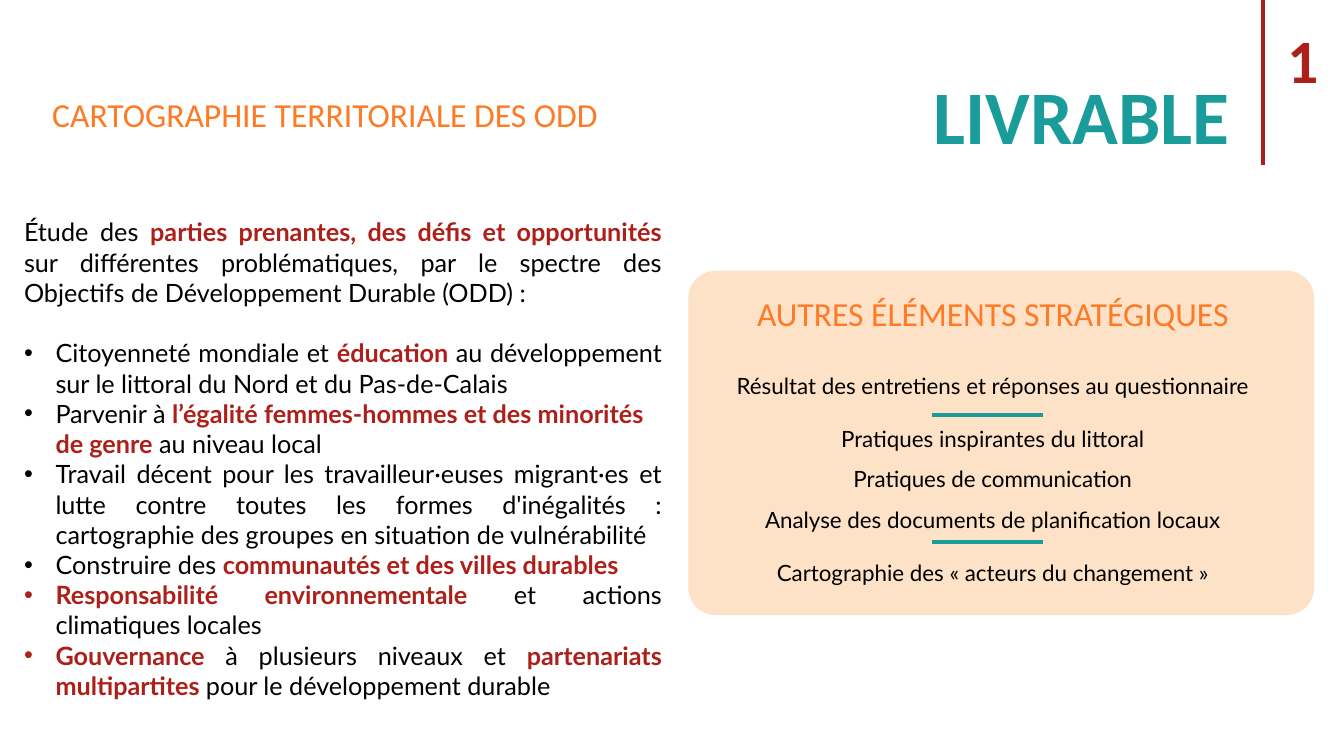
"""Build the LIVRABLE slide on the territorial mapping of the SDGs."""
from dataclasses import dataclass

from lxml.etree import SubElement
from pptx import Presentation
from pptx.dml.color import RGBColor
from pptx.enum.shapes import MSO_CONNECTOR, MSO_SHAPE
from pptx.enum.text import PP_ALIGN
from pptx.oxml.ns import qn
from pptx.shapes.shapetree import _BaseGroupShapes
from pptx.util import Pt

RED = RGBColor(0xAD, 0x20, 0x1A)
TEAL = RGBColor(0x19, 0x9C, 0x9A)
ORANGE = RGBColor(0xFF, 0x7A, 0x24)
PEACH = RGBColor(0xFD, 0xE2, 0xC8)
BLACK = RGBColor(0, 0, 0)
WHITE = RGBColor(0xFF, 0xFF, 0xFF)
BULLET_INDENT = 22.5


@dataclass(frozen=True)
class Para:
    text: str
    align: PP_ALIGN = PP_ALIGN.JUSTIFY
    bullet: bool = False
    before: float = 0


@dataclass(frozen=True)
class TextBox:
    left: float
    top: float
    width: float
    height: float
    paras: list[Para]
    size: float
    color: RGBColor = BLACK
    font: str = "Lato"
    bold: bool = False
    spacing: float = 1.0
    side_inset: float = 7.2


@dataclass(frozen=True)
class Rule:
    x1: float
    y1: float
    x2: float
    y2: float
    color: RGBColor
    weight: float


def heading(text: str, align: PP_ALIGN) -> list[Para]:
    return [Para(text, align)]


def centred(text: str, before: float = 0) -> Para:
    return Para(text, PP_ALIGN.CENTER, before=before)


HEADINGS = [
    TextBox(919.4, 18, 40, 54.7, heading("1", PP_ALIGN.LEFT), 44, RED, "Calibri", True, 0.9, 0),
    TextBox(121.7, 45.4, 763.9, 72.7, heading("LIVRABLE", PP_ALIGN.RIGHT), 54, TEAL, "Calibri", True),
    TextBox(30.2, 63.4, 425.5, 36, heading("CARTOGRAPHIE TERRITORIALE DES ODD", PP_ALIGN.LEFT),
            24, ORANGE, "Calibri"),
]
STUDY = TextBox(10.1, 151.2, 469.8, 356.4, [
    Para("Étude des *parties prenantes, des défis et opportunités* sur différentes problématiques, "
         "par le spectre des Objectifs de Développement Durable (ODD) :"),
    Para("Citoyenneté mondiale et *éducation* au développement sur le littoral du Nord "
         "et du Pas-de-Calais", bullet=True, before=21.6),
    Para("Parvenir à *l’égalité femmes-hommes et des minorités de genre* au niveau local",
         PP_ALIGN.LEFT, bullet=True),
    Para("Travail décent pour les travailleur·euses migrant·es et lutte contre toutes les formes "
         "d'inégalités : cartographie des groupes en situation de vulnérabilité", bullet=True),
    Para("Construire des *communautés et des villes durables*", bullet=True),
    Para("*Responsabilité environnementale *et actions climatiques locales", bullet=True),
    Para("*Gouvernance* à plusieurs niveaux et *partenariats multipartites *"
         "pour le développement durable", bullet=True),
], 18)
STRATEGY = [
    TextBox(503.3, 205.9, 411.8, 36, heading("AUTRES ÉLÉMENTS STRATÉGIQUES", PP_ALIGN.CENTER),
            24, ORANGE, "Calibri"),
    TextBox(503.3, 252.7, 411.8, 172, [
        centred("Résultat des entretiens et réponses au questionnaire"),
        centred("Pratiques inspirantes du littoral", 9.1),
        centred("Pratiques de communication"),
        centred("Analyse des documents de planification locaux"),
        centred("Cartographie des « acteurs du changement »", 9.1),
    ], 16, spacing=1.5),
]
NUMBER_RULE = Rule(902.2, 0, 902.2, 118.1, RED, 3)
SEPARATORS = [Rule(666, y, 745.2, y, TEAL, 2.75) for y in (296.6, 387.4)]


def add_bullet(p) -> None:
    pPr = p._p.get_or_add_pPr()
    pPr.set("marL", str(Pt(BULLET_INDENT)))
    pPr.set("indent", str(-Pt(BULLET_INDENT)))
    SubElement(pPr, qn("a:buFont")).set("typeface", "Arial")
    SubElement(pPr, qn("a:buChar")).set("char", "•")


def draw_text(shapes: _BaseGroupShapes, box: TextBox) -> None:
    sp = shapes.add_textbox(Pt(box.left), Pt(box.top), Pt(box.width), Pt(box.height))
    tf = sp.text_frame
    tf.word_wrap = True
    tf.margin_left = tf.margin_right = Pt(box.side_inset)
    for i, para in enumerate(box.paras):
        p = tf.add_paragraph() if i else tf.paragraphs[0]
        if para.bullet:
            add_bullet(p)
        p.alignment = para.align
        p.line_spacing = box.spacing
        if para.before:
            p.space_before = Pt(para.before)
        for j, part in enumerate(para.text.split("*")):
            if not part:
                continue
            emphasised = j % 2 == 1
            r = p.add_run()
            r.text = part
            r.font.name = box.font
            r.font.size = Pt(box.size)
            r.font.bold = box.bold or emphasised
            r.font.color.rgb = RED if emphasised else box.color


def draw_rule(shapes: _BaseGroupShapes, rule: Rule) -> None:
    line = shapes.add_connector(MSO_CONNECTOR.STRAIGHT, Pt(rule.x1), Pt(rule.y1),
                                Pt(rule.x2), Pt(rule.y2))
    line.line.color.rgb = rule.color
    line.line.width = Pt(rule.weight)
    SubElement(line._element.spPr, qn("a:effectLst"))


def draw_panel(shapes: _BaseGroupShapes) -> None:
    sp = shapes.add_shape(MSO_SHAPE.ROUNDED_RECTANGLE, Pt(491.6), Pt(193.4), Pt(447.1), Pt(246))
    sp.adjustments[0] = 0.08
    sp.shadow.inherit = False
    sp.fill.solid()
    sp.fill.fore_color.rgb = PEACH
    sp.line.fill.background()


def main() -> None:
    prs = Presentation()
    prs.slide_width, prs.slide_height = Pt(960), Pt(540)
    s = prs.slides.add_slide(prs.slide_layouts[6])
    s.background.fill.solid()
    s.background.fill.fore_color.rgb = WHITE
    draw_rule(s.shapes, NUMBER_RULE)
    for box in [*HEADINGS, STUDY]:
        draw_text(s.shapes, box)
    group = s.shapes.add_group_shape()
    draw_panel(group.shapes)
    for box in STRATEGY:
        draw_text(group.shapes, box)
    for rule in SEPARATORS:
        draw_rule(group.shapes, rule)
    prs.save("out.pptx")


if __name__ == "__main__":
    main()
